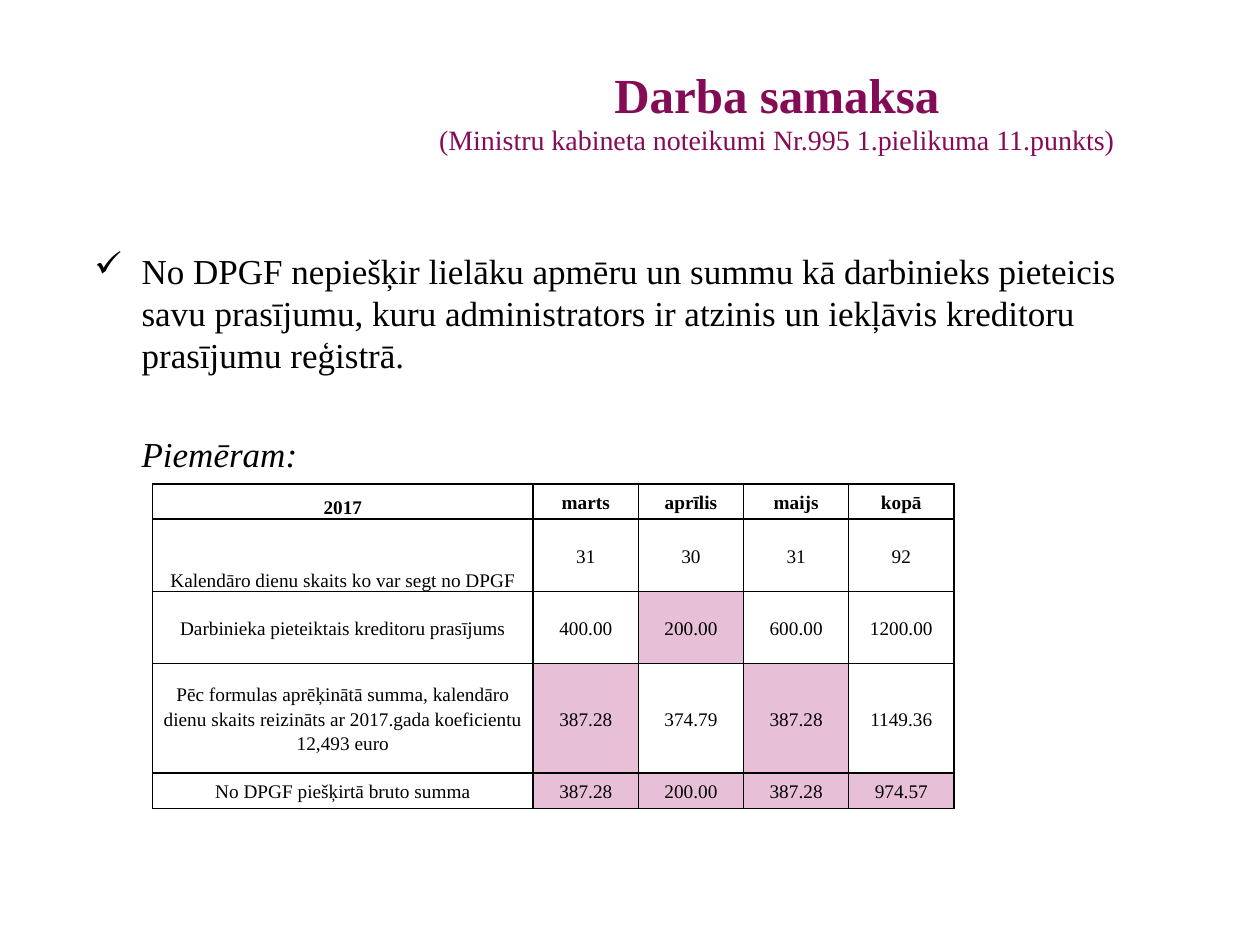
"""Build the slide about wages with its example table."""
from dataclasses import dataclass
from typing import Any

from lxml.etree import SubElement
from pptx import Presentation
from pptx.dml.color import RGBColor
from pptx.enum.text import MSO_ANCHOR as Anchor, PP_ALIGN as Align
from pptx.oxml.ns import qn
from pptx.util import Pt


@dataclass(frozen=True)
class Theme:
    font: str = "Times New Roman"
    title: str = "840B55"
    ink: str = "000000"
    paper: str = "FFFFFF"
    highlight: str = "E7BFD7"
    title_size: float = 28
    subtitle_size: float = 16
    body_size: float = 20
    table_size: float = 11
    border: float = 1


@dataclass(frozen=True)
class Box:
    left: float
    top: float
    width: float
    height: float

    def lengths(self) -> tuple[Pt, ...]:
        return tuple(Pt(value) for value in (self.left, self.top, self.width, self.height))


@dataclass(frozen=True)
class Row:
    height: float
    label: str
    values: tuple[str, ...]
    highlighted: tuple[int, ...] = ()
    label_anchor: Any = Anchor.MIDDLE
    bold: bool = False


THEME = Theme()
TITLE_BOX = Box(203.8, 30.2, 480.2, 81.4)
BODY_BOX = Box(46.8, 138.2, 637.2, 344.2)
TABLE_BOX = Box(87.1, 276.5, 457.9, 185.4)
LABEL_WIDTH = 217.6
VALUE_WIDTH = 60.1
HANGING = 27

ROWS = (
    Row(20.2, "2017", ("marts", "aprīlis", "maijs", "kopā"),
        label_anchor=Anchor.BOTTOM, bold=True),
    Row(41.2, "Kalendāro dienu skaits ko var segt no DPGF", ("31", "30", "31", "92"),
        label_anchor=Anchor.BOTTOM),
    Row(41.2, "Darbinieka pieteiktais kreditoru prasījums",
        ("400.00", "200.00", "600.00", "1200.00"), (2,)),
    Row(62.8, "Pēc formulas aprēķinātā summa, kalendāro dienu skaits reizināts ar "
        "2017.gada koeficientu 12,493 euro",
        ("387.28", "374.79", "387.28", "1149.36"), (1, 3)),
    Row(20.2, "No DPGF piešķirtā bruto summa",
        ("387.28", "200.00", "387.28", "974.57"), (1, 2, 3, 4)),
)


def apply(target: Any, values: dict[str, Any]) -> None:
    for name, value in values.items():
        setattr(target, name, value)


def add_run(paragraph: Any, text: str, size: float, color: str = THEME.ink, **styles: bool) -> None:
    run = paragraph.add_run()
    run.text = text
    apply(run.font, {"name": THEME.font, "size": Pt(size), **styles})
    run.font.color.rgb = RGBColor.from_string(color)


def add_frame(slide: Any, box: Box, top_inset: float) -> Any:
    frame = slide.shapes.add_textbox(*box.lengths()).text_frame
    apply(frame, {"word_wrap": True, "vertical_anchor": Anchor.TOP, "margin_top": Pt(top_inset)})
    return frame


def add_title(slide: Any) -> None:
    paragraph = add_frame(slide, TITLE_BOX, 6.4).paragraphs[0]
    paragraph.alignment = Align.CENTER
    add_run(paragraph, "Darba samaksa", THEME.title_size, THEME.title, bold=True)
    paragraph.add_line_break()
    add_run(paragraph, "(Ministru kabineta noteikumi Nr.995 1.pielikuma 11.punkts)",
            THEME.subtitle_size, THEME.title)


def add_body(slide: Any) -> None:
    frame = add_frame(slide, BODY_BOX, 4.4)
    statement, example = frame.paragraphs[0], frame.add_paragraph()
    for paragraph, indent in ((statement, -HANGING), (example, 0)):
        properties = paragraph._p.get_or_add_pPr()
        properties.set("marL", str(Pt(HANGING)))
        properties.set("indent", str(Pt(indent)))
        paragraph.line_spacing = Pt(24)
    SubElement(statement._p.pPr, qn("a:buChar"), char="✓")
    example.space_before = Pt(32.6)
    add_run(statement, "No DPGF nepiešķir lielāku apmēru un summu kā darbinieks pieteicis "
            "savu prasījumu, kuru administrators ir atzinis un iekļāvis kreditoru "
            "prasījumu reģistrā.", THEME.body_size)
    add_run(example, "Piemēram:", THEME.body_size, italic=True)


def add_borders(cell: Any) -> None:
    properties = cell._tc.get_or_add_tcPr()
    for side in ("lnL", "lnR", "lnT", "lnB"):
        line = SubElement(properties, qn(f"a:{side}"), w=str(Pt(THEME.border)))
        fill = SubElement(line, qn("a:solidFill"))
        SubElement(fill, qn("a:srgbClr"), val=THEME.ink)


def fill_cell(cell: Any, text: str, anchor: Any, color: str, bold: bool) -> None:
    apply(cell, {"margin_left": Pt(5), "margin_right": Pt(5), "margin_top": Pt(0),
                 "margin_bottom": Pt(0), "vertical_anchor": anchor})
    add_borders(cell)
    cell.fill.solid()
    cell.fill.fore_color.rgb = RGBColor.from_string(color)
    paragraph = cell.text_frame.paragraphs[0]
    apply(paragraph, {"alignment": Align.CENTER, "line_spacing": 1.15})
    add_run(paragraph, text, THEME.table_size, bold=bold)


def add_claims_table(slide: Any) -> None:
    column_count = 1 + len(ROWS[0].values)
    table = slide.shapes.add_table(len(ROWS), column_count, *TABLE_BOX.lengths()).table
    apply(table, {"first_row": False, "horz_banding": False})
    for index, column in enumerate(table.columns):
        column.width = Pt(VALUE_WIDTH if index else LABEL_WIDTH)
    for row_index, row in enumerate(ROWS):
        table.rows[row_index].height = Pt(row.height)
        for column_index, text in enumerate((row.label, *row.values)):
            anchor = Anchor.MIDDLE if column_index else row.label_anchor
            color = THEME.highlight if column_index in row.highlighted else THEME.paper
            fill_cell(table.cell(row_index, column_index), text, anchor, color, row.bold)


def main() -> None:
    presentation = Presentation()
    apply(presentation, {"slide_width": Pt(720), "slide_height": Pt(540)})
    slide = presentation.slides.add_slide(presentation.slide_layouts[6])
    add_title(slide)
    add_body(slide)
    add_claims_table(slide)
    presentation.save("out.pptx")


if __name__ == "__main__":
    main()
